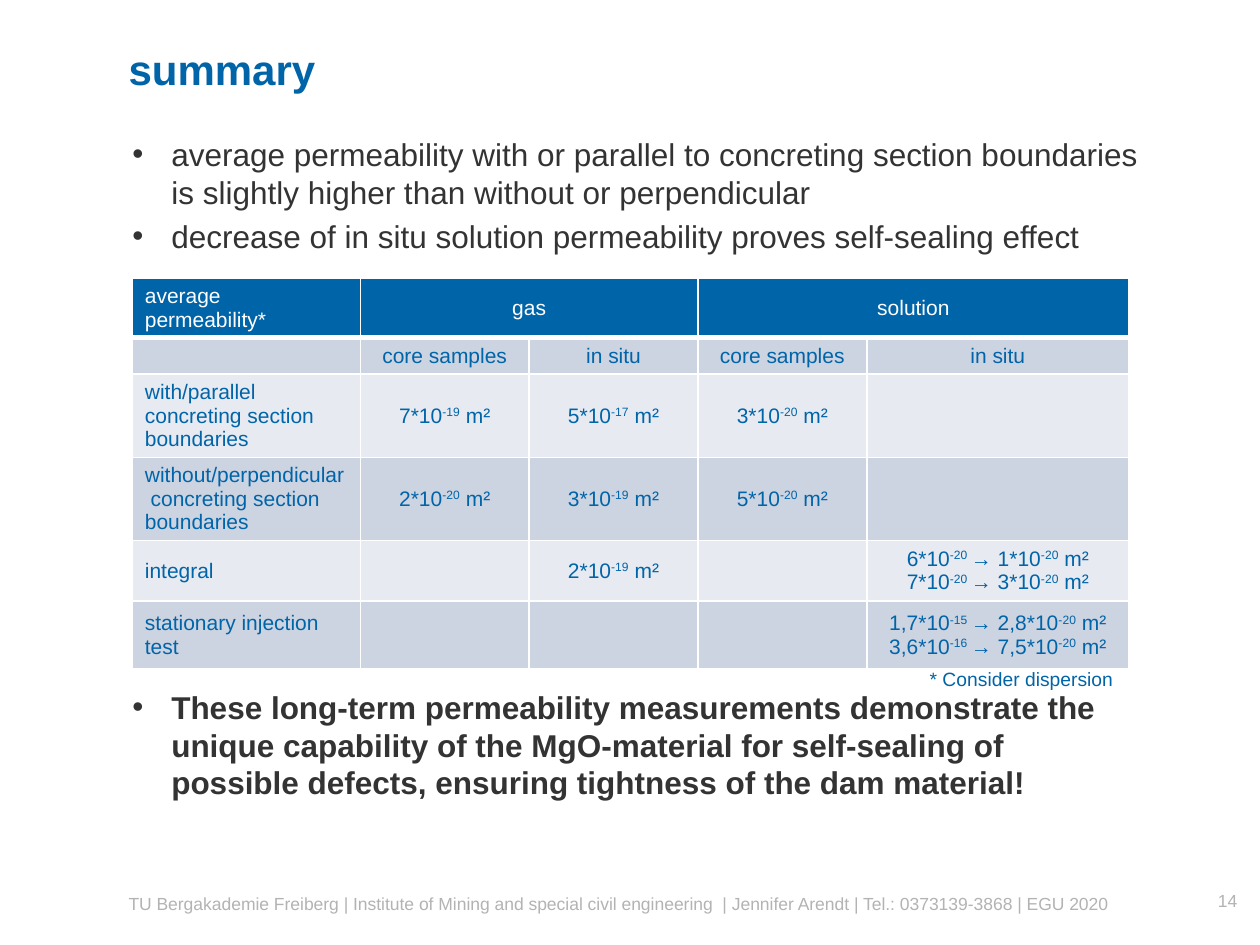
from dataclasses import dataclass
from lxml.etree import SubElement
from pptx import Presentation
from pptx.dml.color import RGBColor
from pptx.enum.text import MSO_ANCHOR as Anchor, PP_ALIGN as Align
from pptx.oxml.ns import qn
from pptx.util import Inches, Pt


@dataclass(frozen=True)
class Theme:
    font: str = "Arial"
    blue: str = "0064A8"
    dark: str = "333333"
    grey: str = "B3B3B3"
    white: str = "FFFFFF"
    band_dark: str = "CCD3E1"
    band_light: str = "E7EAF1"
    title: int = 24
    body: int = 18
    cell: int = 12
    remark: int = 11
    footer: int = 10


theme = Theme()


def add_span(para, text, size, color, bold=False):
    span = para.add_run()
    span.text = text
    span.font.name = theme.font
    span.font.size = Pt(size)
    span.font.bold = bold
    span.font.color.rgb = RGBColor.from_string(color)
    return span


def add_box(left, top, width, height, inset=0):
    box = page.shapes.add_textbox(Inches(left), Inches(top), Inches(width), Inches(height))
    frame = box.text_frame
    frame.word_wrap = True
    frame.margin_left = frame.margin_right = Inches(inset)
    frame.margin_top = frame.margin_bottom = Inches(inset / 2)
    return frame


deck = Presentation()
deck.slide_width, deck.slide_height = Inches(10), Inches(7.5)
page = deck.slides.add_slide(deck.slide_layouts[6])

title = add_box(1.02, 0.2, 7.99, 0.69)
title.vertical_anchor = Anchor.MIDDLE
add_span(title.paragraphs[0], "summary", theme.title, theme.blue, True)

footer = add_box(1.02, 7.09, 7.99, 0.24)
add_span(
    footer.paragraphs[0],
    "TU Bergakademie Freiberg | Institute of Mining and special civil engineering  | "
    "Jennifer Arendt | Tel.: 0373139-3868 | EGU 2020",
    theme.footer, theme.grey,
)

page_number = add_box(9.02, 7.06, 0.8, 0.24)
page_number.paragraphs[0].alignment = Align.RIGHT
add_span(page_number.paragraphs[0], "14", theme.footer, theme.grey)

bullet_groups = [
    (1.07, 1.05, False, [
        "average permeability with or parallel to concreting section boundaries "
        "is slightly higher than without or perpendicular",
        "decrease of in situ solution permeability proves self-sealing effect",
    ]),
    (5.46, 1.0, True, [
        "These long-term permeability measurements demonstrate the unique capability of the "
        "MgO-material for self-sealing of possible defects, ensuring tightness of the dam material!",
    ]),
]
for top, height, bold, lines in bullet_groups:
    frame = add_box(1.05, top, 7.99, height)
    for index, line in enumerate(lines):
        para = frame.add_paragraph() if index else frame.paragraphs[0]
        para.space_before = Pt(3.6 if index else 0)
        props = para._p.get_or_add_pPr()
        props.set("marL", str(Inches(0.31)))
        props.set("indent", str(-Inches(0.31)))
        SubElement(props, qn("a:buFont"), typeface=theme.font)
        SubElement(props, qn("a:buChar"), char="•")
        add_span(para, line, theme.body, theme.dark, bold)

column_widths = [1.81, 1.34, 1.34, 1.34, 2.08]
row_heights = [0.47, 0.29, 0.66, 0.66, 0.48, 0.54]
rows = [
    ["average permeability*", "gas", "", "solution", ""],
    ["", "core samples", "in situ", "core samples", "in situ"],
    ["with/parallel  concreting section boundaries",
     "7*10|‑19| m²", "5*10|‑17| m²", "3*10|‑20| m²", ""],
    ["without/perpendicular  concreting section boundaries",
     "2*10|‑20| m²", "3*10|‑19| m²", "5*10|‑20| m²", ""],
    ["integral", "", "2*10|‑19| m²", "",
     "6*10|‑20 |→ 1*10|‑20| m²\n7*10|‑20 |→ 3*10|‑20| m²"],
    ["stationary injection test", "", "", "",
     "1,7*10|-15 |→ 2,8*10|-20| m²\n3,6*10|-16 |→ 7,5*10|-20| m²"],
]
table = page.shapes.add_table(
    len(rows), len(column_widths), Inches(1.05), Inches(2.21),
    Inches(sum(column_widths)), Inches(sum(row_heights)),
).table
table.horz_banding = False
for column, width in zip(table.columns, column_widths):
    column.width = Inches(width)
for row, height in zip(table.rows, row_heights):
    row.height = Inches(height)
for first in (1, 3):
    table.cell(0, first).merge(table.cell(0, first + 1))

for row_index, texts in enumerate(rows):
    header = row_index == 0
    band = theme.band_dark if row_index % 2 else theme.band_light
    for column_index, text in enumerate(texts):
        cell = table.cell(row_index, column_index)
        cell.vertical_anchor = Anchor.MIDDLE
        cell.margin_top = cell.margin_bottom = Inches(0.02)
        props = cell._tc.get_or_add_tcPr()
        for side in ("L", "R", "T", "B"):
            thick = (header and side == "B") or (row_index == 1 and side == "T")
            border = SubElement(props, qn(f"a:ln{side}"), w=str(Pt(3 if thick else 1)))
            SubElement(SubElement(border, qn("a:solidFill")), qn("a:srgbClr"), val=theme.white)
        cell.fill.solid()
        cell.fill.fore_color.rgb = RGBColor.from_string(theme.blue if header else band)
        for line_index, line in enumerate(text.split("\n")):
            frame = cell.text_frame
            para = frame.add_paragraph() if line_index else frame.paragraphs[0]
            para.alignment = Align.CENTER if column_index else Align.LEFT
            if not line:
                SubElement(para._p, qn("a:endParaRPr"), sz=str(theme.cell * 100))
                continue
            for part_index, part in enumerate(line.split("|")):
                span = add_span(para, part, theme.cell, theme.white if header else theme.blue)
                if part_index % 2:
                    span._r.get_or_add_rPr().set("baseline", "30000")

remark = add_box(7.28, 5.25, 2.05, 0.29, 0.1)
add_span(remark.paragraphs[0], "* Consider dispersion", theme.remark, theme.blue)

deck.save("out.pptx")
